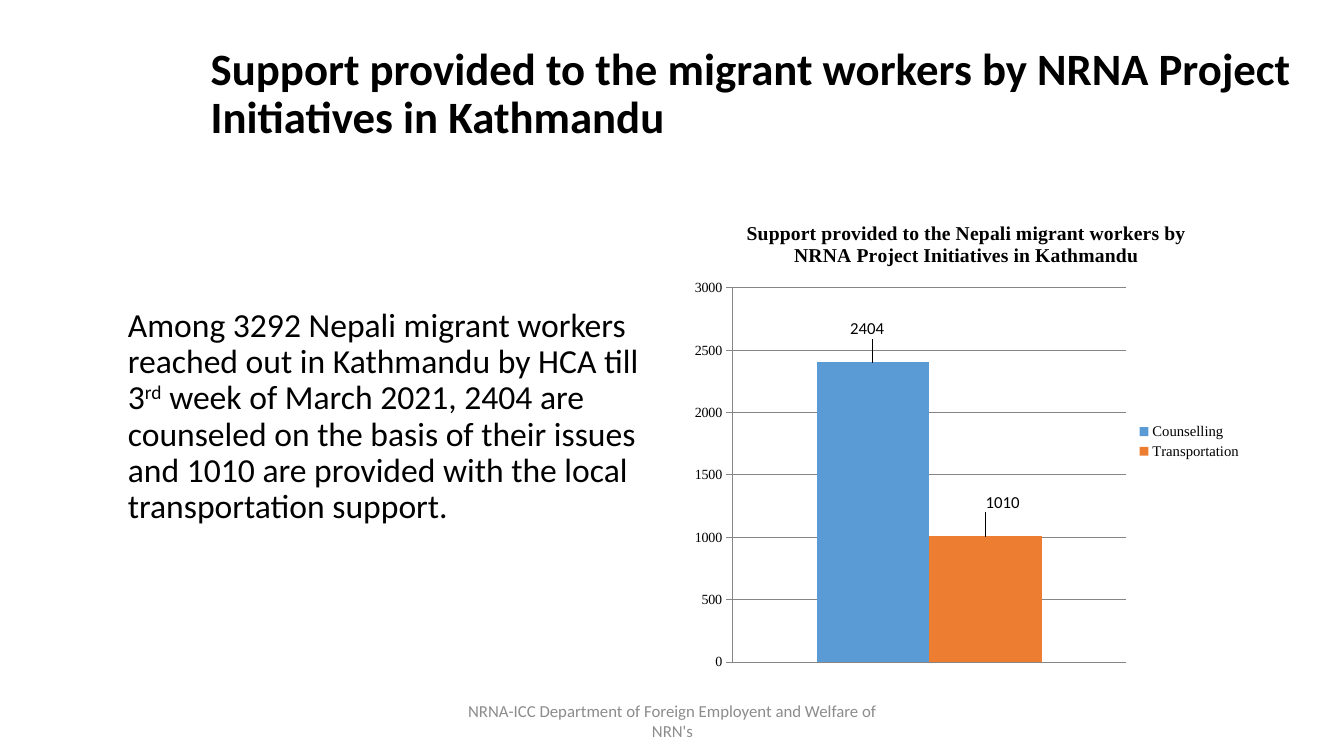
from lxml import etree
from pptx import Presentation
from pptx import util as u
from pptx.chart.data import CategoryChartData
from pptx.dml.color import RGBColor
from pptx.enum import chart as ch, text as tx
from pptx.oxml.ns import qn

PX = 9144
BLACK = RGBColor(0, 0, 0)
GRAY = RGBColor(0x8C, 0x8C, 0x8C)
LINE = RGBColor(0x86, 0x86, 0x86)
BLUE = RGBColor(0x5B, 0x9B, 0xD5)
ORANGE = RGBColor(0xED, 0x7D, 0x31)
SANS = "Calibri"
SERIF = "Times New Roman"


def style(font, size, name=SANS, color=BLACK, bold=False):
    font.size = u.Pt(size)
    font.name = name
    font.color.rgb = color
    font.bold = bold


def layout(after, **parts):
    outer = etree.Element(qn("c:layout"))
    after.addnext(outer)
    manual = etree.SubElement(outer, qn("c:manualLayout"))
    for tag, val in parts.items():
        etree.SubElement(manual, qn("c:" + tag)).set("val", str(val))
    return outer


prs = Presentation()
prs.slide_width = 1333 * PX
prs.slide_height = 750 * PX
slide = prs.slides.add_slide(prs.slide_layouts[5])

title = slide.shapes.title
title.left, title.top, title.width, title.height = [n * PX for n in (199, 22, 1150, 145)]
frame = title.text_frame
frame.text = "Support provided to the migrant workers by NRNA Project Initiatives in Kathmandu"
frame.auto_size = tx.MSO_AUTO_SIZE.NONE
frame.vertical_anchor = tx.MSO_ANCHOR.MIDDLE
para = frame.paragraphs[0]
para.alignment = tx.PP_ALIGN.LEFT
para.line_spacing = 0.9
style(para.runs[0].font, 32, bold=True)

body = slide.shapes.add_textbox(*[n * PX for n in (117, 301, 542, 375)])
body.text_frame.word_wrap = True
para = body.text_frame.paragraphs[0]
para.line_spacing = 0.9
for words in (
    "Among 3292 Nepali migrant workers reached out in Kathmandu by HCA till 3",
    "rd",
    " week of March 2021, 2404 are counseled on the basis of their issues "
    "and 1010 are provided with the local transportation support.",
):
    run = para.add_run()
    run.text = words
    style(run.font, 24)
    if words == "rd":
        run.font._element.set("baseline", "30000")

data = CategoryChartData()
data.categories = ["1"]
data.add_series("Counselling", [2404])
data.add_series("Transportation", [1010])
chart = slide.shapes.add_chart(
    ch.XL_CHART_TYPE.COLUMN_CLUSTERED, *[n * PX for n in (675, 200, 567, 476)], data
).chart
style(chart.font, 10)

chart.has_title = True
head = chart.chart_title.text_frame
head.text = "Support provided to the Nepali migrant workers by NRNA Project Initiatives in Kathmandu"
style(head.paragraphs[0].runs[0].font, 14, SERIF, bold=True)
chart.chart_title.include_in_layout = False

chart.has_legend = True
chart.legend.position = ch.XL_LEGEND_POSITION.RIGHT
chart.legend.include_in_layout = False
style(chart.legend.font, 10.5, SERIF)

chart.category_axis.visible = False
axis = chart.value_axis
axis.minimum_scale = 0
axis.maximum_scale = 3000
axis.major_unit = 500
axis.major_tick_mark = ch.XL_TICK_MARK.OUTSIDE
axis.has_major_gridlines = True
for rule in (axis.format.line, axis.major_gridlines.format.line):
    rule.color.rgb = LINE
    rule.width = u.Pt(0.75)
style(axis.tick_labels.font, 10, SERIF)

plot = chart.plots[0]
plot.gap_width = 150
plot.overlap = 0
plot.vary_by_categories = False
for bar, color, shift in zip(plot.series, (BLUE, ORANGE), (-0.01, 0.03)):
    bar.format.fill.solid()
    bar.format.fill.fore_color.rgb = color
    label = bar.points[0].data_label
    style(label.font, 12)
    label.position = ch.XL_LABEL_POSITION.OUTSIDE_END
    layout(bar._element.find(".//" + qn("c:dLbl")).find(qn("c:idx")), x=shift, y=-0.04)

area = chart._chartSpace.find(".//" + qn("c:plotArea"))
for old in area.findall(qn("c:layout")):
    area.remove(old)
inner = layout(area[0], layoutTarget="inner", xMode="edge", yMode="edge",
               x=0.09, y=0.18, w=0.69, h=0.78)
area.insert(0, inner)

foot = slide.shapes.add_textbox(*[n * PX for n in (442, 695, 450, 40)])
frame = foot.text_frame
frame.word_wrap = True
frame.vertical_anchor = tx.MSO_ANCHOR.MIDDLE
frame.text = "NRNA-ICC Department of Foreign Employent and Welfare of NRN's"
para = frame.paragraphs[0]
para.alignment = tx.PP_ALIGN.CENTER
style(para.runs[0].font, 12, color=GRAY)

prs.save("out.pptx")
